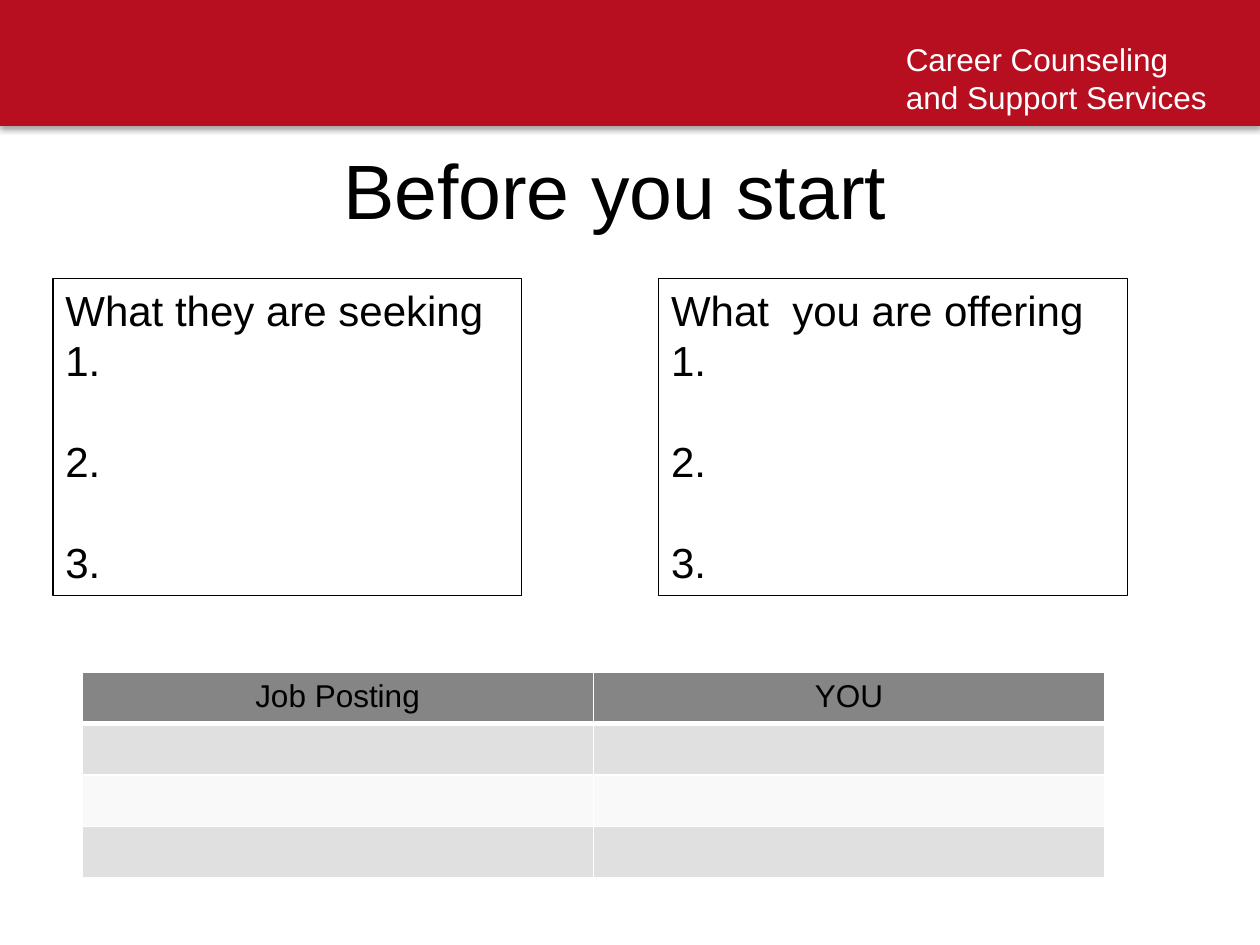
"""Build the "Before you start" slide comparing a job posting with you."""
from lxml import etree
from pptx import Presentation
from pptx import util as u
from pptx.dml import color
from pptx.enum import shapes, text
from pptx.oxml import ns


def paint(fill, tone):
    fill.solid()
    fill.fore_color.rgb = color.RGBColor.from_string(tone)


def style(par, size, tone):
    for run in par.runs:
        run.font.name = "Arial"
        run.font.size = u.Pt(size)
        run.font.bold = False
        paint(run.font.fill, tone)


deck = Presentation()
deck.slide_width, deck.slide_height = u.Cm(25.4), u.Cm(19.05)
slide = deck.slides.add_slide(deck.slide_layouts[5])
items = slide.shapes

band = items.add_shape(shapes.MSO_SHAPE.RECTANGLE, 0, 0, deck.slide_width, u.Cm(2.54))
paint(band.fill, "B70F20")
band.line.fill.background()
band.shadow.inherit = False
effects = band._element.spPr.find(ns.qn("a:effectLst"))
shade = etree.SubElement(effects, ns.qn("a:outerShdw"), blurRad=str(u.Pt(3.1)),
                         dist=str(u.Pt(1.8)), dir="5400000", rotWithShape="0")
black = etree.SubElement(shade, ns.qn("a:srgbClr"), val="000000")
etree.SubElement(black, ns.qn("a:alpha"), val="35000")

unit = items.add_textbox(u.Cm(18.01), u.Cm(0.69), u.Cm(6.76), u.Cm(1.8))
unit.text_frame.word_wrap = True
unit.text_frame.text = "Career Counseling and Support Services"
style(unit.text_frame.paragraphs[0], 18, "FFFFFF")

title = items.title
title.left, title.top = u.Cm(1.07), u.Cm(2.74)
title.width, title.height = u.Cm(22.66), u.Cm(2.11)
title.text_frame.text = "Before you start"
title.text_frame.vertical_anchor = text.MSO_ANCHOR.MIDDLE
title.text_frame.paragraphs[0].alignment = text.PP_ALIGN.CENTER
style(title.text_frame.paragraphs[0], 44, "000000")

for left, head in ((1.07, "What they are seeking"), (13.28, "What  you are offering")):
    box = items.add_textbox(u.Cm(left), u.Cm(5.61), u.Cm(9.45), u.Cm(6.4))
    paint(box.line.fill, "000000")
    box.line.width = u.Pt(0.75)
    frame = box.text_frame
    frame.word_wrap = True
    frame.text = "\n".join((head, "1.", "2.", "3."))
    for spot, par in enumerate(frame.paragraphs):
        style(par, 24, "000000")
        if spot > 1:
            par.space_before = u.Pt(28.8)

grid = items.add_table(4, 2, u.Cm(1.65), u.Cm(13.56), u.Cm(20.62), u.Cm(4.14)).table
heads = ("Job Posting", "YOU")
tones = ("858585", "E0E0E0", "F9F9F9", "E0E0E0")
for row, tone in enumerate(tones):
    grid.rows[row].height = u.Cm(1.04 if row else 1.02)
    for col, head in enumerate(heads):
        cell = grid.cell(row, col)
        props = cell._tc.get_or_add_tcPr()
        for side in ("lnL", "lnR", "lnT", "lnB"):
            thick = (row, side) in ((0, "lnB"), (1, "lnT"))
            edge = etree.SubElement(props, ns.qn("a:" + side), w=str(u.Pt(3 if thick else 1)))
            solid = etree.SubElement(edge, ns.qn("a:solidFill"))
            etree.SubElement(solid, ns.qn("a:srgbClr"), val="FFFFFF")
        paint(cell.fill, tone)
        if row == 0:
            cell.text_frame.text = head
            par = cell.text_frame.paragraphs[0]
            par.alignment = text.PP_ALIGN.CENTER
            style(par, 18, "000000")

deck.save("out.pptx")
